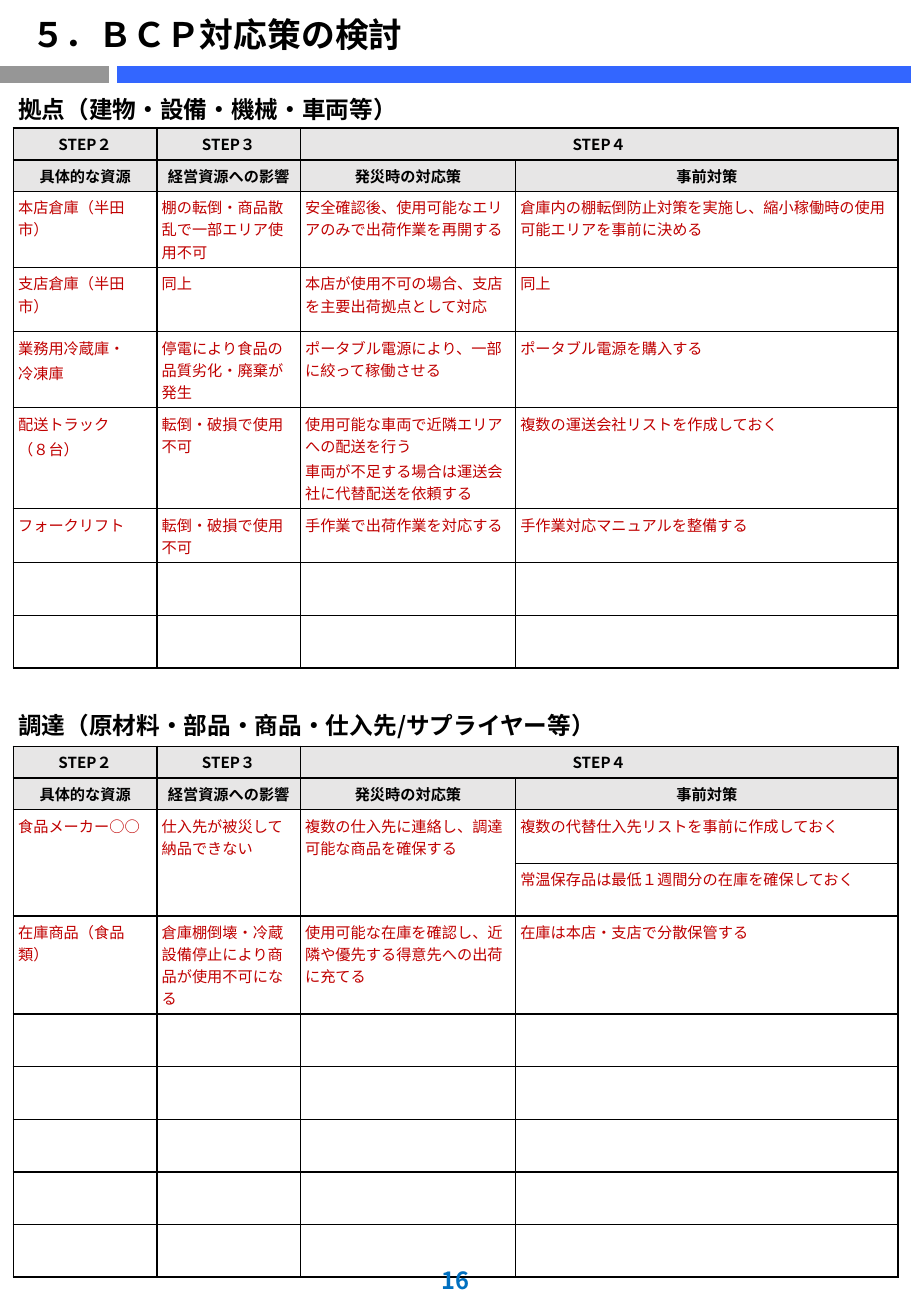
from lxml.etree import SubElement
from pptx import Presentation
from pptx.dml.color import RGBColor
from pptx.enum.shapes import MSO_CONNECTOR
from pptx.enum.text import MSO_ANCHOR, PP_ALIGN
from pptx.oxml.ns import qn
from pptx.util import Cm, Pt

BLACK = RGBColor(0x00, 0x00, 0x00)
RED = RGBColor(0xC0, 0x00, 0x00)
BLUE = RGBColor(0x33, 0x66, 0xFF)
PAGE_BLUE = RGBColor(0x00, 0x70, 0xC0)
GRAY = RGBColor(0x96, 0x96, 0x96)
HEADER_GRAY = RGBColor(0xE7, 0xE6, 0xE6)
FONT = "Noto Sans CJK JP"

COLUMN_WIDTHS = [3.0, 3.0, 4.5, 8.0]
HEADER_HEIGHT = 0.66
BLANK_HEIGHT = 1.1
HEADERS = [
    ["STEP２", "STEP３", "STEP４", ""],
    ["具体的な資源", "経営資源への影響", "発災時の対応策", "事前対策"],
]
SECTIONS = [
    {
        "title": "拠点（建物・設備・機械・車両等）",
        "font": "Arial",
        "height": 0.9,
        "rows": [
            (1.59, ["本店倉庫（半田市）", "棚の転倒・商品散乱で一部エリア使用不可",
                    "安全確認後、使用可能なエリアのみで出荷作業を再開する",
                    "倉庫内の棚転倒防止対策を実施し、縮小稼働時の使用可能エリアを事前に決める"]),
            (1.34, ["支店倉庫（半田市）", "同上",
                    "本店が使用不可の場合、支店を主要出荷拠点として対応", "同上"]),
            (1.59, ["業務用冷蔵庫・\n冷凍庫", "停電により食品の品質劣化・廃棄が発生",
                    "ポータブル電源により、一部に絞って稼働させる",
                    "ポータブル電源を購入する"]),
            (2.1, ["配送トラック\n（８台）", "転倒・破損で使用不可",
                   "使用可能な車両で近隣エリアへの配送を行う\n"
                   "車両が不足する場合は運送会社に代替配送を依頼する",
                   "複数の運送会社リストを作成しておく"]),
            (1.13, ["フォークリフト", "転倒・破損で使用不可",
                    "手作業で出荷作業を対応する", "手作業対応マニュアルを整備する"]),
        ],
        "blanks": 2,
    },
    {
        "title": "調達（原材料・部品・商品・仕入先/サプライヤー等）",
        "font": FONT,
        "height": 1.64,
        "rows": [
            (1.12, ["食品メーカー○○", "仕入先が被災して納品できない",
                    "複数の仕入先に連絡し、調達可能な商品を確保する",
                    "複数の代替仕入先リストを事前に作成しておく"]),
            (1.1, ["", "", "", "常温保存品は最低１週間分の在庫を確保しておく"]),
            (2.05, ["在庫商品（食品類）", "倉庫棚倒壊・冷蔵設備停止により商品が使用不可になる",
                    "使用可能な在庫を確認し、近隣や優先する得意先への出荷に充てる",
                    "在庫は本店・支店で分散保管する"]),
        ],
        "blanks": 5,
    },
]


def write(tf, text, size=9, color=BLACK, bold=False, font=FONT, align=PP_ALIGN.LEFT):
    for i, line in enumerate(text.split("\n")):
        p = tf.add_paragraph() if i else tf.paragraphs[0]
        p.alignment = align
        p.font.size = Pt(size)
        if i:
            p.space_before = Pt(size * 0.2)
        if line:
            r = p.add_run()
            r.text = line
            r.font.size = Pt(size)
            r.font.bold = bold
            r.font.color.rgb = color
            r.font.name = font
            SubElement(r.font._element, qn("a:ea"), typeface=font)


class Page:
    def __init__(self, prs):
        self.s = prs.slides.add_slide(prs.slide_layouts[6])

    def bar(self, x1, x2, y, color):
        line = self.s.shapes.add_connector(MSO_CONNECTOR.STRAIGHT, Cm(x1), Cm(y), Cm(x2), Cm(y))
        line.line.color.rgb = color
        line.line.width = Pt(10)
        SubElement(line._element.spPr, qn("a:effectLst"))

    def text(self, x, y, w, h, text, **fmt):
        tf = self.s.shapes.add_textbox(Cm(x), Cm(y), Cm(w), Cm(h)).text_frame
        tf.word_wrap = True
        tf.vertical_anchor = MSO_ANCHOR.BOTTOM
        write(tf, text, **fmt)

    def cell(self, cell, text, sides="LRTB", anchor=MSO_ANCHOR.TOP, fill=None, **fmt):
        cell.margin_left = cell.margin_right = Cm(0.1)
        cell.margin_top = cell.margin_bottom = Cm(0.1)
        cell.vertical_anchor = anchor
        tcPr = cell._tc.get_or_add_tcPr()
        for side in "LRTB":
            ln = SubElement(tcPr, qn(f"a:ln{side}"), w=str(Pt(1)))
            if side in sides:
                solid = SubElement(ln, qn("a:solidFill"))
                SubElement(solid, qn("a:srgbClr"), val=str(BLACK))
            else:
                SubElement(ln, qn("a:noFill"))
        if fill is None:
            cell.fill.background()
        else:
            cell.fill.solid()
            cell.fill.fore_color.rgb = fill
        write(cell.text_frame, text, **fmt)

    def table(self, x, y, sections):
        heights = []
        for sec in sections:
            heights += [sec["height"], HEADER_HEIGHT, HEADER_HEIGHT]
            heights += [h for h, _ in sec["rows"]] + [BLANK_HEIGHT] * sec["blanks"]
        table = self.s.shapes.add_table(len(heights), len(COLUMN_WIDTHS), Cm(x), Cm(y),
                                        Cm(sum(COLUMN_WIDTHS)), Cm(sum(heights))).table
        table.first_row = table.horz_banding = False
        for column, width in zip(table.columns, COLUMN_WIDTHS):
            column.width = Cm(width)
        for row, height in zip(table.rows, heights):
            row.height = Cm(height)
        top = 0
        for sec in sections:
            top = self.section(table, top, sec)

    def section(self, table, top, sec):
        for c in range(4):
            self.cell(table.cell(top, c), "" if c else sec["title"], "TB" if top else "B",
                      MSO_ANCHOR.BOTTOM, size=14, bold=True, font=sec["font"])
        table.cell(top, 0).merge(table.cell(top, 3))
        for r, labels in enumerate(HEADERS, top + 1):
            for c, label in enumerate(labels):
                self.cell(table.cell(r, c), label, anchor=MSO_ANCHOR.MIDDLE, fill=HEADER_GRAY,
                          bold=True, align=PP_ALIGN.CENTER)
        table.cell(top + 1, 2).merge(table.cell(top + 1, 3))
        body = [texts for _, texts in sec["rows"]] + [[""] * 4] * sec["blanks"]
        for i, texts in enumerate(body):
            following = body[i + 1] if i + 1 < len(body) else texts
            for c, text in enumerate(texts):
                sides = "LRTB"
                if any(texts) and not text:
                    sides = "LRB"
                elif any(following) and not following[c]:
                    sides = "LRT"
                self.cell(table.cell(top + 3 + i, c), text, sides, color=RED)
        return top + 3 + len(body)


def main():
    prs = Presentation()
    prs.slide_width, prs.slide_height = Cm(19.05), Cm(27.51)
    page = Page(prs)
    page.bar(0, 2.28, 1.55, GRAY)
    page.bar(2.45, 19.05, 1.55, BLUE)
    page.table(0.28, 1.78, SECTIONS)
    page.text(0.4, 0.1, 18.2, 1.17, "５．ＢＣＰ対応策の検討", size=20, bold=True)
    page.text(0, 26.16, 19.05, 1.02, "16", size=14, bold=True, color=PAGE_BLUE,
              align=PP_ALIGN.CENTER)
    prs.save("out.pptx")


if __name__ == "__main__":
    main()
